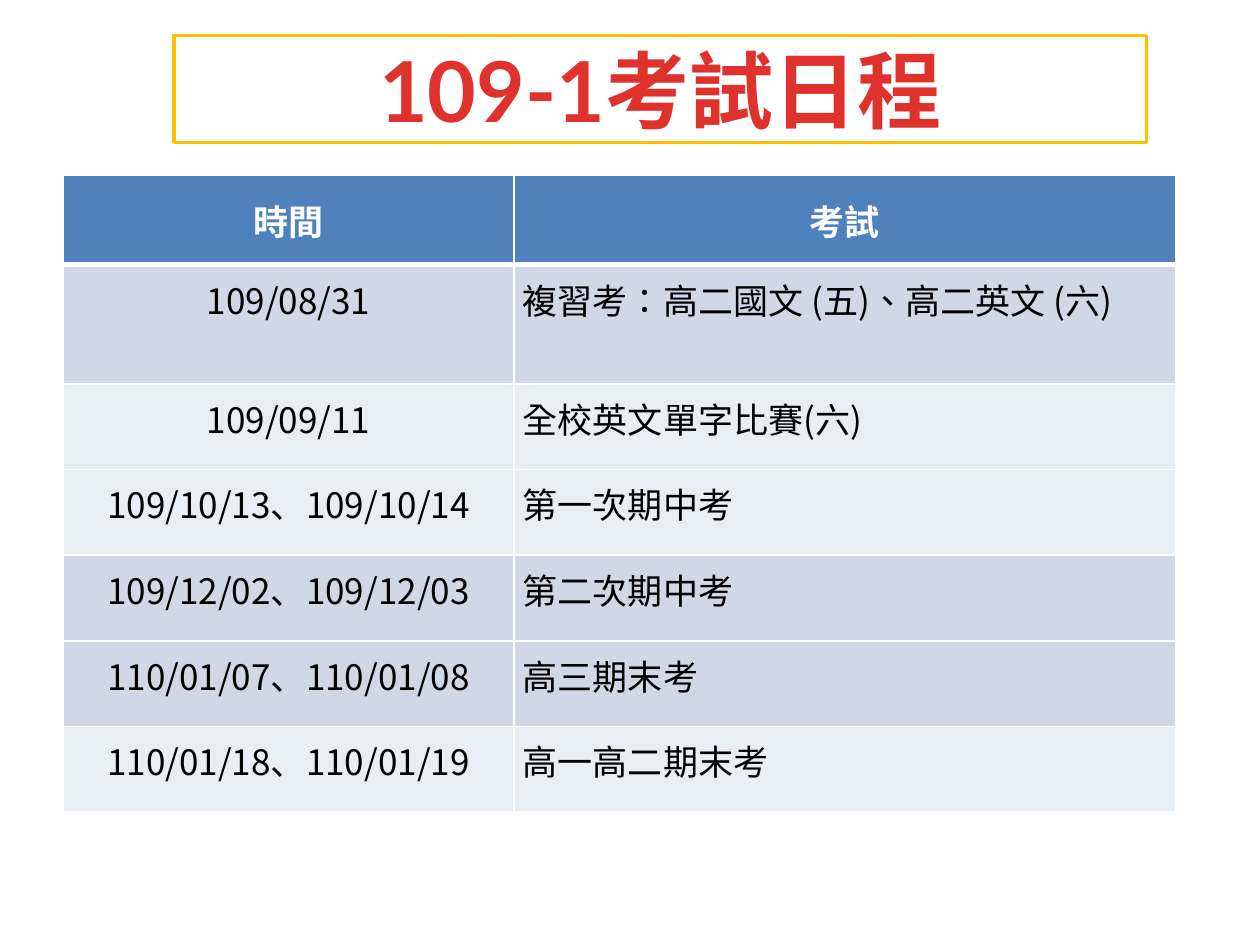
from dataclasses import dataclass
from lxml.etree import SubElement
from pptx import Presentation
from pptx.dml.color import RGBColor
from pptx.enum.lang import MSO_LANGUAGE_ID
from pptx.enum.text import MSO_ANCHOR, MSO_AUTO_SIZE, PP_ALIGN
from pptx.oxml.ns import qn
from pptx.util import Inches, Pt

TITLE = "109-1考試日程"
HEADERS = ("時間", "考試")
EXAMS = [
    ("109/08/31", "複習考：高二國文 (五)、高二英文 (六)", "dark"),
    ("109/09/11", "全校英文單字比賽(六)", "light"),
    ("109/10/13、109/10/14", "第一次期中考", "light"),
    ("109/12/02、109/12/03", "第二次期中考", "dark"),
    ("110/01/07、110/01/08", "高三期末考", "dark"),
    ("110/01/18、110/01/19", "高一高二期末考", "light"),
]
COLUMNS = (3.58, 5.25)
HEADER_HEIGHT, ROW_HEIGHT = 0.71, 0.68


@dataclass(frozen=True)
class Theme:
    white: str = "FFFFFF"
    black: str = "000000"
    title: str = "DF322D"
    frame: str = "FFC000"
    header: str = "4F81BD"
    dark: str = "D0D8E8"
    light: str = "E9EDF4"
    title_font: str = "Lato"
    header_font: str = "Times New Roman"
    body_font: str = "Noto Sans CJK SC"
    title_size: int = 48
    table_size: int = 20


T = Theme()


def color(value):
    return RGBColor.from_string(value)


def write(tf, text, font, size, ink, bold, align):
    p = tf.paragraphs[0]
    p.alignment = align
    r = p.add_run()
    r.text = text
    r.font.name, r.font.size, r.font.bold = font, Pt(size), bold
    r.font.color.rgb = color(ink)
    SubElement(r.font._element, qn("a:ea"), typeface=T.body_font)
    return r


def add_title(s):
    sp = s.shapes.title
    sp.left, sp.top, sp.width, sp.height = map(Inches, (1.38, 0.28, 7.72, 0.85))
    geom = SubElement(sp._element.spPr, qn("a:prstGeom"), prst="roundRect")
    SubElement(geom, qn("a:avLst"))
    sp.fill.solid()
    sp.fill.fore_color.rgb = color(T.white)
    fill = sp._element.spPr.find(qn("a:solidFill"))
    SubElement(fill[0], qn("a:alpha"), val="42000")
    sp.line.color.rgb = color(T.frame)
    sp.line.width = Pt(2)
    tf = sp.text_frame
    tf.auto_size = MSO_AUTO_SIZE.NONE
    tf.vertical_anchor = MSO_ANCHOR.MIDDLE
    write(tf, TITLE, T.title_font, T.title_size, T.title, True, PP_ALIGN.CENTER)


def style_cell(cell, fill, padding, top, bottom):
    cell.margin_left = cell.margin_right = Inches(0.07)
    cell.margin_top = cell.margin_bottom = Inches(padding)
    tcPr = cell._tc.get_or_add_tcPr()
    for side, width in (("L", 1), ("R", 1), ("T", top), ("B", bottom)):
        ln = SubElement(tcPr, qn(f"a:ln{side}"), w=str(Pt(width)))
        SubElement(SubElement(ln, qn("a:solidFill")), qn("a:srgbClr"), val=T.white)
    cell.fill.solid()
    cell.fill.fore_color.rgb = color(fill)


def add_schedule(s):
    height = HEADER_HEIGHT + ROW_HEIGHT * len(EXAMS)
    table = s.shapes.add_table(
        len(EXAMS) + 1, len(COLUMNS), Inches(0.5), Inches(1.39),
        Inches(sum(COLUMNS)), Inches(height)).table
    for column, width in zip(table.columns, COLUMNS):
        column.width = Inches(width)
    for i, row in enumerate(table.rows):
        row.height = Inches(ROW_HEIGHT if i else HEADER_HEIGHT)

    for cell, text in zip(table.rows[0].cells, HEADERS):
        style_cell(cell, T.header, 0, 1, 3)
        cell.vertical_anchor = MSO_ANCHOR.MIDDLE
        write(cell.text_frame, text, T.header_font, T.table_size, T.white, True,
              PP_ALIGN.CENTER)

    for i, (date, exam, shade) in enumerate(EXAMS, 1):
        for j, (text, align) in enumerate(((date, PP_ALIGN.CENTER), (exam, PP_ALIGN.LEFT))):
            cell = table.cell(i, j)
            style_cell(cell, getattr(T, shade), 0.07, 3 if i == 1 else 1, 1)
            r = write(cell.text_frame, text, T.body_font, T.table_size, T.black, False, align)
            if j == 1:
                r.font.language_id = MSO_LANGUAGE_ID.TRADITIONAL_CHINESE


def main():
    prs = Presentation()
    prs.slide_width, prs.slide_height = Inches(10), Inches(7.5)
    s = prs.slides.add_slide(prs.slide_layouts[5])
    add_title(s)
    add_schedule(s)
    prs.save("out.pptx")


if __name__ == "__main__":
    main()
